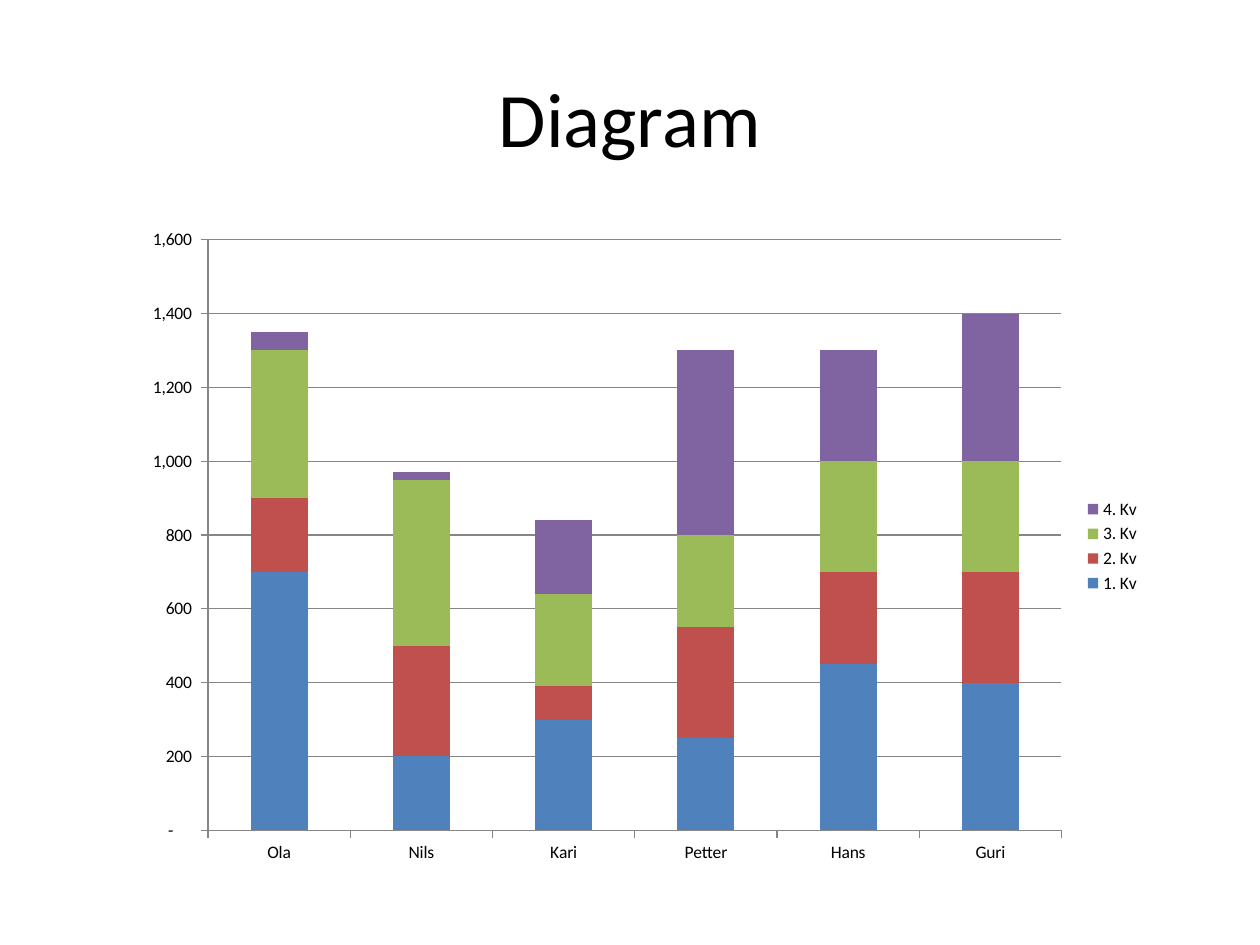
"""Build a slide with a stacked column chart of four quarters for six people."""
from pptx import Presentation
from pptx.chart.data import CategoryChartData
from pptx.dml.color import RGBColor
from pptx.enum.chart import XL_CHART_TYPE as Kind, XL_LEGEND_POSITION as Side, XL_TICK_MARK as Tick
from pptx.enum.text import MSO_ANCHOR as Anchor, PP_ALIGN as Align
from pptx.util import Pt


def paint(color, code):
    color.rgb = RGBColor.from_string(code)


names = ["Ola", "Nils", "Kari", "Petter", "Hans", "Guri"]
terms = [
    ("1. Kv", "4F81BD", [700, 200, 300, 250, 450, 400]),
    ("2. Kv", "C0504D", [200, 300, 90, 300, 250, 300]),
    ("3. Kv", "9BBB59", [400, 450, 250, 250, 300, 300]),
    ("4. Kv", "8064A2", [50, 20, 200, 500, 300, 400]),
]
form = '_(* #,##0_);_(* \\(#,##0\\);_(* "-"??_);_('

deck = Presentation()
deck.slide_width, deck.slide_height = Pt(720), Pt(540)
slide = deck.slides.add_slide(deck.slide_layouts[5])

title = slide.shapes.title
place = {"left": 36, "top": 21.6, "width": 648, "height": 90}
for key, size in place.items():
    setattr(title, key, Pt(size))
frame = title.text_frame
frame.text = "Diagram"
frame.vertical_anchor = Anchor.MIDDLE
line = frame.paragraphs[0]
line.alignment = Align.CENTER

data = CategoryChartData(number_format=form)
data.categories = names
for name, code, vals in terms:
    data.add_series(name, vals)
box = [Pt(n) for n in (73.44, 123.84, 585.36, 376.56)]
chart = slide.shapes.add_chart(Kind.COLUMN_STACKED, *box, data).chart
chart.has_title = False
chart.has_legend = True

plot = chart.plots[0]
cats, vals = chart.category_axis, chart.value_axis
styles = [
    (line.font, {"name": "Calibri", "size": Pt(44)}),
    (chart.font, {"name": "Calibri", "size": Pt(10)}),
    (chart.legend, {"position": Side.RIGHT, "include_in_layout": False}),
    (plot, {"gap_width": 150, "overlap": 100, "vary_by_categories": False}),
    (cats, {"major_tick_mark": Tick.OUTSIDE, "minor_tick_mark": Tick.NONE}),
    (vals, {"major_tick_mark": Tick.OUTSIDE, "minor_tick_mark": Tick.NONE,
            "has_major_gridlines": True, "minimum_scale": 0,
            "maximum_scale": 1600, "major_unit": 200}),
    (vals.tick_labels, {"number_format": form, "number_format_is_linked": False}),
]
for item, style in styles:
    for key, value in style.items():
        setattr(item, key, value)

for font in (line.font, chart.font):
    paint(font.color, "000000")
for part in (cats, vals, vals.major_gridlines):
    part.format.line.width = Pt(0.75)
    paint(part.format.line.color, "868686")
for bar, (name, code, nums) in zip(plot.series, terms):
    bar.format.fill.solid()
    paint(bar.format.fill.fore_color, code)

deck.save("out.pptx")
